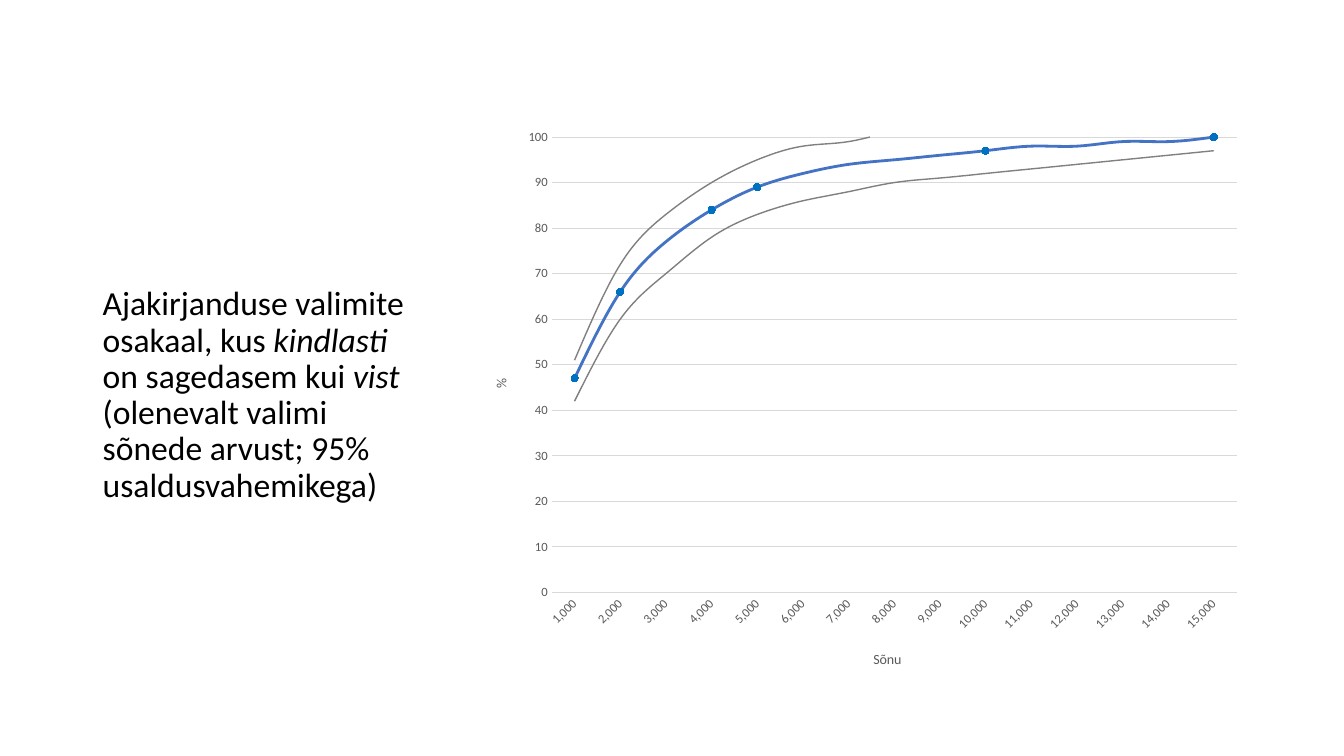
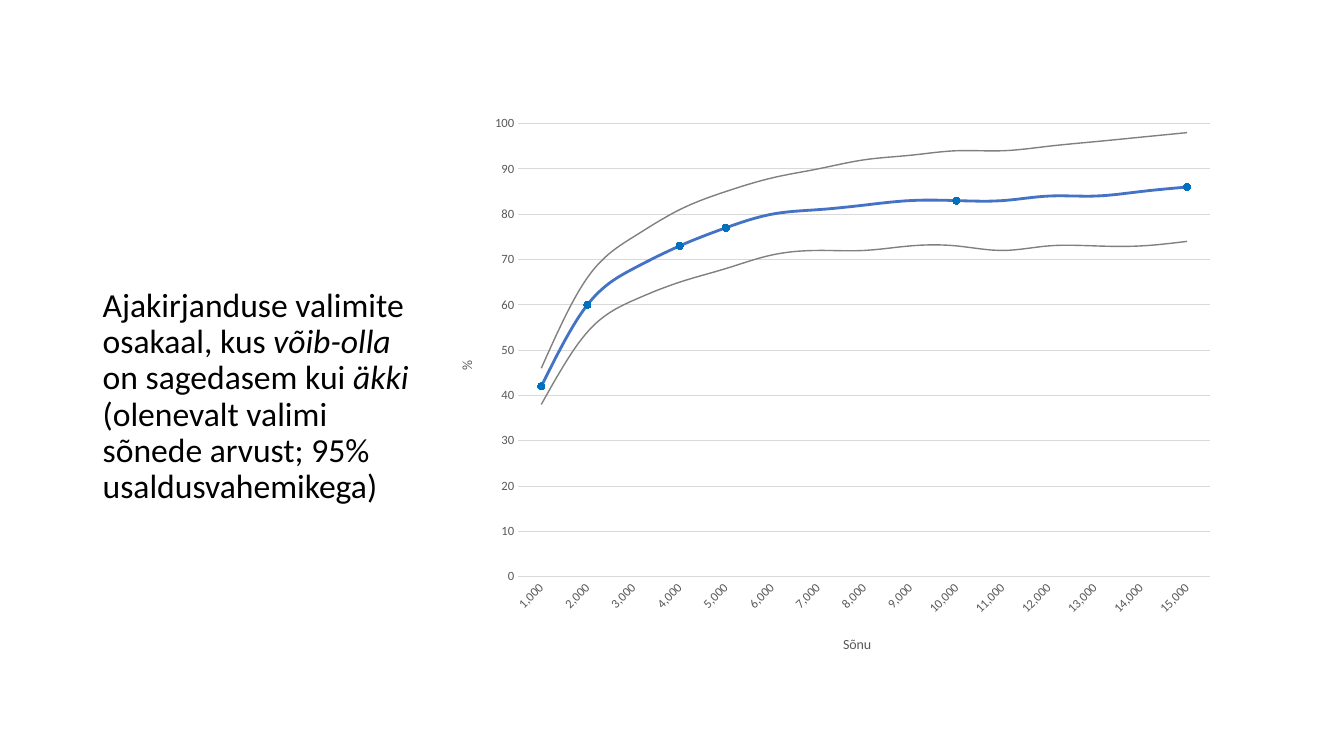
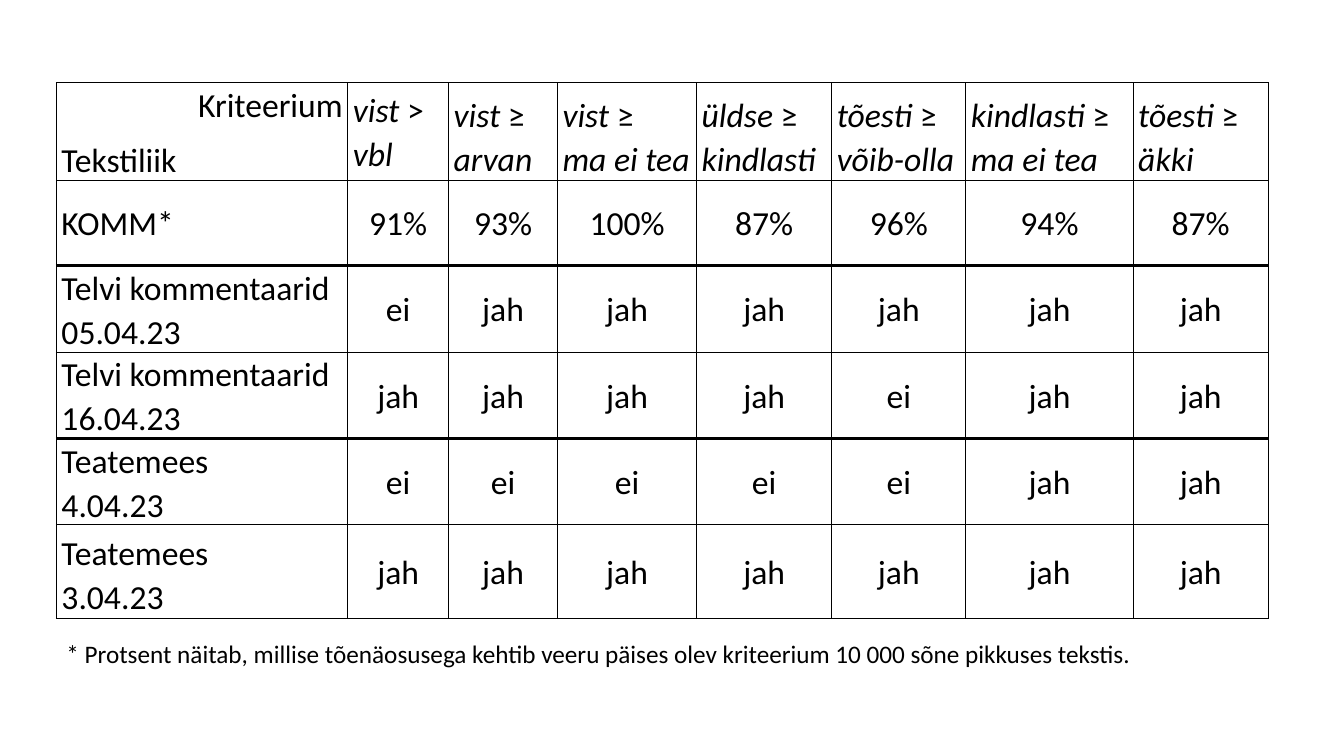
"""Build three slides on word frequency: two line charts and a table."""
import lxml.etree
import pptx
import pptx.chart.data
import pptx.dml.color
import pptx.enum.chart
import pptx.enum.text
import pptx.oxml.ns
import pptx.util

Inches = pptx.util.Inches
Pt = pptx.util.Pt
RGBColor = pptx.dml.color.RGBColor
Align = pptx.enum.text.PP_ALIGN
Anchor = pptx.enum.text.MSO_ANCHOR
Kind = pptx.enum.chart
qn = pptx.oxml.ns.qn

BLACK = RGBColor(0, 0, 0)
BLUE = RGBColor(0x44, 0x72, 0xC4)
DOT = RGBColor(0x00, 0x70, 0xC0)
GREY = RGBColor(0x80, 0x80, 0x80)
PALE = RGBColor(0xD9, 0xD9, 0xD9)
DARK = RGBColor(0x59, 0x59, 0x59)
FACE = "Calibri"

TITLE = {"line_spacing": 0.9}
CELL = {"line_spacing": 1.07, "space_after": Pt(8)}
INSET = {"margin_left": Inches(0.05), "margin_right": Inches(0.05),
         "margin_top": 0, "margin_bottom": 0}
SCALE = {"minimum_scale": 0, "maximum_scale": 100, "major_unit": 10}
PLAIN = {"first_row": False, "horz_banding": False}

MARKED = (1, 2, 4, 5, 10, 15)
LEAD = "Ajakirjanduse valimite osakaal, kus "
TAIL = "(olenevalt valimi sõnede arvust; 95% usaldusvahemikega)"
CHARTS = [
    {"title": f"{LEAD}|kindlasti| on sagedasem kui |vist |{TAIL}",
     "text": (0.92, 1.71, 3.43, 4.43),
     "box": (4.7, 1.25, 7.72, 5.51),
     "plot": (0.1, 0.02, 0.88, 0.82),
     "mean": (47, 66, 77, 84, 89, 92, 94, 95, 96, 97, 98, 98, 99, 99, 100),
     "low": (42, 60, 70, 78, 83, 86, 88, 90, 91, 92, 93, 94, 95, 96, 97),
     "high": (51, 72, 83, 90, 95, 98, 99, 101, 101) + (102,) * 6},
    {"title": f"{LEAD}|võib-olla| on sagedasem kui |äkki |{TAIL}",
     "text": (0.92, 1.71, 3.27, 4.46),
     "box": (4.36, 1.06, 7.8, 5.55),
     "plot": (0.1, 0.03, 0.88, 0.81),
     "mean": (42, 60, 68, 73, 77, 80, 81, 82, 83, 83, 83, 84, 84, 85, 86),
     "low": (38, 54, 61, 65, 68, 71, 72, 72, 73, 73, 72, 73, 73, 73, 74),
     "high": (46, 66, 75, 81, 85, 88, 90, 92, 93, 94, 94, 95, 96, 97, 98)},
]

COLS = (2.89, 1, 1.08, 1.38, 1.34, 1.33, 1.66, 1.34)
ROWS = (0.89, 0.85, 0.85, 0.85, 0.85, 0.93)
THICK = (2, 4)
GRID = [
    ["Kriteerium\nTekstiliik", "|vist| > |vbl", "|vist| ≥ |arvan",
     "|vist| ≥ \v|ma ei tea", "|üldse| ≥ |kindlasti", "|tõesti| ≥ |võib-olla",
     "|kindlasti| ≥ |ma ei tea", "|tõesti| ≥ |äkki"],
    ["KOMM*", "91%", "93%", "100%", "87%", "96%", "94%", "87%"],
    ["Telvi kommentaarid 05.04.23", "ei"] + ["jah"] * 6,
    ["Telvi kommentaarid 16.04.23"] + ["jah"] * 4 + ["ei", "jah", "jah"],
    ["Teatemees \v4.04.23"] + ["ei"] * 5 + ["jah"] * 2,
    ["Teatemees \v3.04.23"] + ["jah"] * 7,
]
NOTE = ("* Protsent näitab, millise tõenäosusega kehtib veeru päises olev "
        "kriteerium 10 000 sõne pikkuses tekstis.")


def style(thing, form):
    """Set each attribute named in the dict."""
    for name, value in form.items():
        setattr(thing, name, value)


def ink(font, size, tint, **form):
    """Give a font its face, size and colour."""
    style(font, {"name": FACE, "size": Pt(size), **form})
    font.color.rgb = tint


def write(frame, text, size, form):
    """Write lines into a frame, with italics between bars."""
    for row, line in enumerate(text.split("\n")):
        para = frame.add_paragraph() if row else frame.paragraphs[0]
        style(para, form)
        for turn, part in enumerate(line.split("|")):
            for step, piece in enumerate(part.split("\v")):
                if step:
                    para.add_line_break()
                if piece:
                    run = para.add_run()
                    run.text = piece
                    ink(run.font, size, BLACK, italic=turn % 2 == 1)


def add_text(slide, box, text, size, form, frame_form):
    """Add a text box."""
    frame = slide.shapes.add_textbox(*map(Inches, box)).text_frame
    style(frame, frame_form)
    write(frame, text, size, form)


def place(host, index, spot, inner=False):
    """Fix the place of a chart part as shares of the chart."""
    for old in host.findall(qn("c:layout")):
        host.remove(old)
    outer = lxml.etree.Element(qn("c:layout"))
    hand = lxml.etree.SubElement(outer, qn("c:manualLayout"))
    rules = [("layoutTarget", "inner")] if inner else []
    rules += [("xMode", "edge"), ("yMode", "edge"), *zip("xywh", spot)]
    for name, value in rules:
        lxml.etree.SubElement(hand, qn("c:" + name)).set("val", str(value))
    host.insert(index, outer)


def set_axis(axis, text, spot, code):
    """Format one axis and its title."""
    style(axis, {"major_tick_mark": Kind.XL_TICK_MARK.NONE,
                 "minor_tick_mark": Kind.XL_TICK_MARK.NONE})
    style(axis.tick_labels, {"number_format": code,
                             "number_format_is_linked": False})
    ink(axis.tick_labels.font, 9, DARK)
    title = axis.axis_title
    title.text_frame.text = text
    ink(title.text_frame.paragraphs[0].runs[0].font, 10, DARK, bold=False)
    place(title._element, 1, spot)


def set_line(line, tint, width):
    """Give a line its colour and width."""
    line.color.rgb = tint
    line.width = Pt(width)


def add_lines(slide, item):
    """Add the line chart with its bounds and marked points."""
    data = pptx.chart.data.CategoryChartData(number_format="0")
    data.categories = [1000 * step for step in range(1, 16)]
    data.categories.number_format = "#,##0"
    dots = [value if step in MARKED else None
            for step, value in enumerate(item["mean"], 1)]
    sets = (item["mean"], item["low"], item["high"], dots)
    for step, values in enumerate(sets, 1):
        data.add_series(f"Series {step}", values)
    chart = slide.shapes.add_chart(
        Kind.XL_CHART_TYPE.LINE_MARKERS, *map(Inches, item["box"]),
        data).chart
    style(chart, {"has_legend": False, "has_title": False})
    ink(chart.font, 10, BLACK)
    plot = chart.plots[0]
    plot.vary_by_categories = False
    looks = ((BLUE, 2), (GREY, 1), (GREY, 1))
    for line, look in zip(plot.series, looks):
        line.smooth = True
        line.marker.style = Kind.XL_MARKER_STYLE.NONE
        set_line(line.format.line, *look)
    last = plot.series[3]
    last.smooth = False
    last.format.line.fill.background()
    style(last.marker, {"style": Kind.XL_MARKER_STYLE.CIRCLE, "size": 5})
    last.marker.format.fill.solid()
    last.marker.format.fill.fore_color.rgb = DOT
    set_line(last.marker.format.line, DOT, 0.75)
    words, share = chart.category_axis, chart.value_axis
    set_axis(words, "Sõnu", (0.51, 0.94), "#,##0")
    set_axis(share, "%", (0.02, 0.45), "0")
    style(share, SCALE)
    share.format.line.fill.background()
    set_line(share.major_gridlines.format.line, PALE, 0.75)
    set_line(words.format.line, PALE, 0.75)
    body = words._element.find(qn("c:txPr")).find(qn("a:bodyPr"))
    body.set("rot", "-2700000")
    area = next(chart._chartSpace.iter(qn("c:plotArea")))
    place(area, 0, item["plot"], True)


def edge(cell, widths):
    """Draw the four borders of a cell."""
    props = cell._tc.get_or_add_tcPr()
    for side, width in zip("LRTB", widths):
        line = lxml.etree.SubElement(props, qn("a:ln" + side))
        line.set("w", str(int(Pt(width))))
        fill = lxml.etree.SubElement(line, qn("a:solidFill"))
        lxml.etree.SubElement(fill, qn("a:srgbClr")).set("val", str(BLACK))


def add_grid(slide):
    """Add the table of criteria by text type."""
    table = slide.shapes.add_table(
        len(ROWS), len(COLS), Inches(0.56), Inches(0.82),
        Inches(sum(COLS)), Inches(sum(ROWS))).table
    style(table, PLAIN)
    for col, width in zip(table.columns, COLS):
        col.width = Inches(width)
    for row, height in zip(table.rows, ROWS):
        row.height = Inches(height)
    for y, line in enumerate(GRID):
        for x, text in enumerate(line):
            cell = table.cell(y, x)
            low = x != 1 if y == 0 else x == 0 and y > 1
            style(cell, {**INSET, "vertical_anchor":
                         Anchor.BOTTOM if low else Anchor.MIDDLE})
            side = Align.CENTER if x and y else Align.LEFT
            write(cell.text_frame, text, 24, {**CELL, "alignment": side})
            rims = [2.25 if rim in THICK else 1 for rim in (y, y + 1)]
            edge(cell, (1, 1, *rims))
            cell.fill.background()
    table.cell(0, 0).text_frame.paragraphs[0].alignment = Align.RIGHT


def main():
    """Build and save the slides."""
    deck = pptx.Presentation()
    style(deck, {"slide_width": Inches(13.33), "slide_height": Inches(7.5)})
    blank = deck.slide_layouts[6]
    for item in CHARTS:
        slide = deck.slides.add_slide(blank)
        add_text(slide, item["text"], item["title"], 24, TITLE,
                 {"word_wrap": True, "vertical_anchor": Anchor.MIDDLE})
        add_lines(slide, item)
    slide = deck.slides.add_slide(blank)
    add_grid(slide)
    add_text(slide, (0.56, 6.28, 10.88, 0.4), NOTE, 18, {},
             {"word_wrap": False})
    deck.save("out.pptx")


if __name__ == "__main__":
    main()
